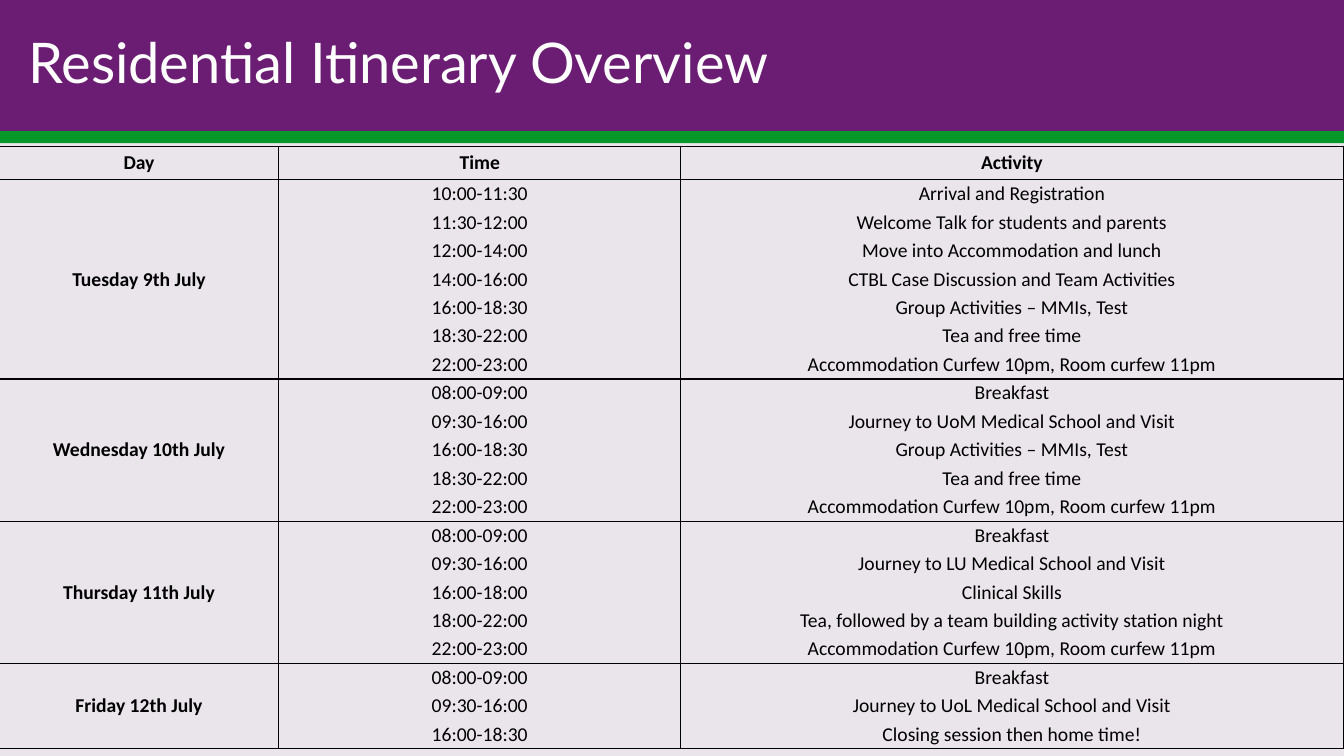
from pptx import Presentation, util as u
from pptx.dml.color import RGBColor
from pptx.enum import shapes, text
from pptx.oxml import parse_xml

PURPLE, GREEN, PALE, WHITE, BLACK = "6B1D73", "069829", "EAE5EB", "FFFFFF", "000000"
DRAWING = "http://schemas.openxmlformats.org/drawingml/2006/main"
PLAIN_STYLE = "{2D5ABB26-0587-4C30-8999-92F81FD0307C}"
WIDTH, HEIGHT = 960, 540
CURFEW = ("22:00-23:00", "Accommodation Curfew 10pm, Room curfew 11pm")
BREAKFAST = ("08:00-09:00", "Breakfast")
GROUP_WORK = ("16:00-18:30", "Group Activities – MMIs, Test")
FREE_TIME = ("18:30-22:00", "Tea and free time")

ITINERARY = [
    ("Day", [("Time", "Activity")]),
    ("Tuesday 9th July", [
        ("10:00-11:30", "Arrival and Registration"),
        ("11:30-12:00", "Welcome Talk for students and parents"),
        ("12:00-14:00", "Move into Accommodation and lunch"),
        ("14:00-16:00", "CTBL Case Discussion and Team Activities"),
        GROUP_WORK, FREE_TIME, CURFEW]),
    ("Wednesday 10th July", [
        BREAKFAST,
        ("09:30-16:00", "Journey to UoM Medical School and Visit"),
        GROUP_WORK, FREE_TIME, CURFEW]),
    ("Thursday 11th July", [
        BREAKFAST,
        ("09:30-16:00", "Journey to LU Medical School and Visit"),
        ("16:00-18:00", "Clinical Skills"),
        ("18:00-22:00", "Tea, followed by a team building activity station night"),
        CURFEW]),
    ("Friday 12th July", [
        BREAKFAST,
        ("09:30-16:00", "Journey to UoL Medical School and Visit"),
        ("16:00-18:30", "Closing session then home time!")]),
]


def color(value):
    return RGBColor.from_string(value)


def write(frame, words, size=14, font="Calibri", fill=BLACK, bold=False,
          align=text.PP_ALIGN.CENTER, spacing=1.0):
    paragraph = frame.paragraphs[0]
    paragraph.alignment = align
    paragraph.line_spacing = spacing
    run = paragraph.add_run()
    run.text = words
    run.font.size = u.Pt(size)
    run.font.name = font
    run.font.bold = bold
    run.font.color.rgb = color(fill)


def add_band(slide, left, top, width, height, fill):
    band = slide.shapes.add_shape(shapes.MSO_SHAPE.RECTANGLE, u.Pt(left), u.Pt(top),
                                  u.Pt(width), u.Pt(height))
    band.shadow.inherit = False
    band.fill.solid()
    band.fill.fore_color.rgb = color(fill)
    band.line.fill.background()


def add_header(slide, left, top, width, height):
    # Purple band with a green rule below it
    add_band(slide, left, top, width, height, PURPLE)
    add_band(slide, left, top + height, width, 8.64, GREEN)
    # Title in front of the bands
    title = slide.shapes.title
    slide.shapes._spTree.append(title._element)
    title.left, title.top = u.Pt(left + 13), u.Pt(top + 10.8)
    title.width, title.height = u.Pt(width - 32), u.Pt(height - 22.3)
    title.text_frame.vertical_anchor = text.MSO_ANCHOR.MIDDLE
    title.text_frame.auto_size = text.MSO_AUTO_SIZE.NONE
    write(title.text_frame, "Residential Itinerary Overview", size=40, font="Lato",
          fill=WHITE, align=text.PP_ALIGN.LEFT, spacing=0.9)


def set_borders(cell, sides):
    # Sides that are not listed get an explicit empty line
    properties = cell._tc.get_or_add_tcPr()
    solid = f'<a:solidFill><a:srgbClr val="{BLACK}"/></a:solidFill>'
    for index, side in enumerate("LRTB"):
        paint = solid if side in sides else "<a:noFill/>"
        properties.insert(index, parse_xml(
            f'<a:ln{side} xmlns:a="{DRAWING}" w="12700">{paint}</a:ln{side}>'))


def format_cell(cell, sides):
    cell.fill.background()
    cell.vertical_anchor = text.MSO_ANCHOR.MIDDLE
    cell.margin_left = cell.margin_right = cell.margin_top = cell.margin_bottom = 0
    set_borders(cell, sides)


def add_itinerary(slide, left, top, width, height):
    row_count = sum(len(sessions) for _, sessions in ITINERARY)
    frame = slide.shapes.add_table(row_count, 3, u.Pt(left), u.Pt(top),
                                   u.Pt(width), u.Pt(height))
    table = frame.table
    table.first_row = table.horz_banding = False
    table._tbl.tblPr.find(f"{{{DRAWING}}}tableStyleId").text = PLAIN_STYLE

    # Column widths and row heights
    for column, share in zip(table.columns, (0.208, 0.299, 0.493)):
        column.width = u.Pt(width * share)
    header_height = 24
    for index, row in enumerate(table.rows):
        row.height = u.Pt(header_height if index == 0
                          else (height - header_height) / (row_count - 1))

    # One block of rows per day, outlined as a group
    start = 0
    for day, sessions in ITINERARY:
        last = start + len(sessions) - 1
        for row, session in enumerate(sessions, start):
            sides = "LR" + "T" * (row == start) + "B" * (row == last)
            for column, words in enumerate(session, 1):
                cell = table.cell(row, column)
                format_cell(cell, sides)
                write(cell.text_frame, words, bold=start == 0)
            format_cell(table.cell(row, 0), "LRTB" if row == start else sides)
        day_cell = table.cell(start, 0)
        if last > start:
            day_cell.merge(table.cell(last, 0))
        write(day_cell.text_frame, day, bold=True)
        start = last + 1


def main():
    presentation = Presentation()
    presentation.slide_width, presentation.slide_height = u.Pt(WIDTH), u.Pt(HEIGHT)
    slide = presentation.slides.add_slide(presentation.slide_layouts[5])
    slide.background.fill.solid()
    slide.background.fill.fore_color.rgb = color(PALE)
    add_header(slide, 0, 0, WIDTH, 93.6)
    add_itinerary(slide, -0.5, 104.4, WIDTH, 430.5)
    presentation.save("out.pptx")


if __name__ == "__main__":
    main()
